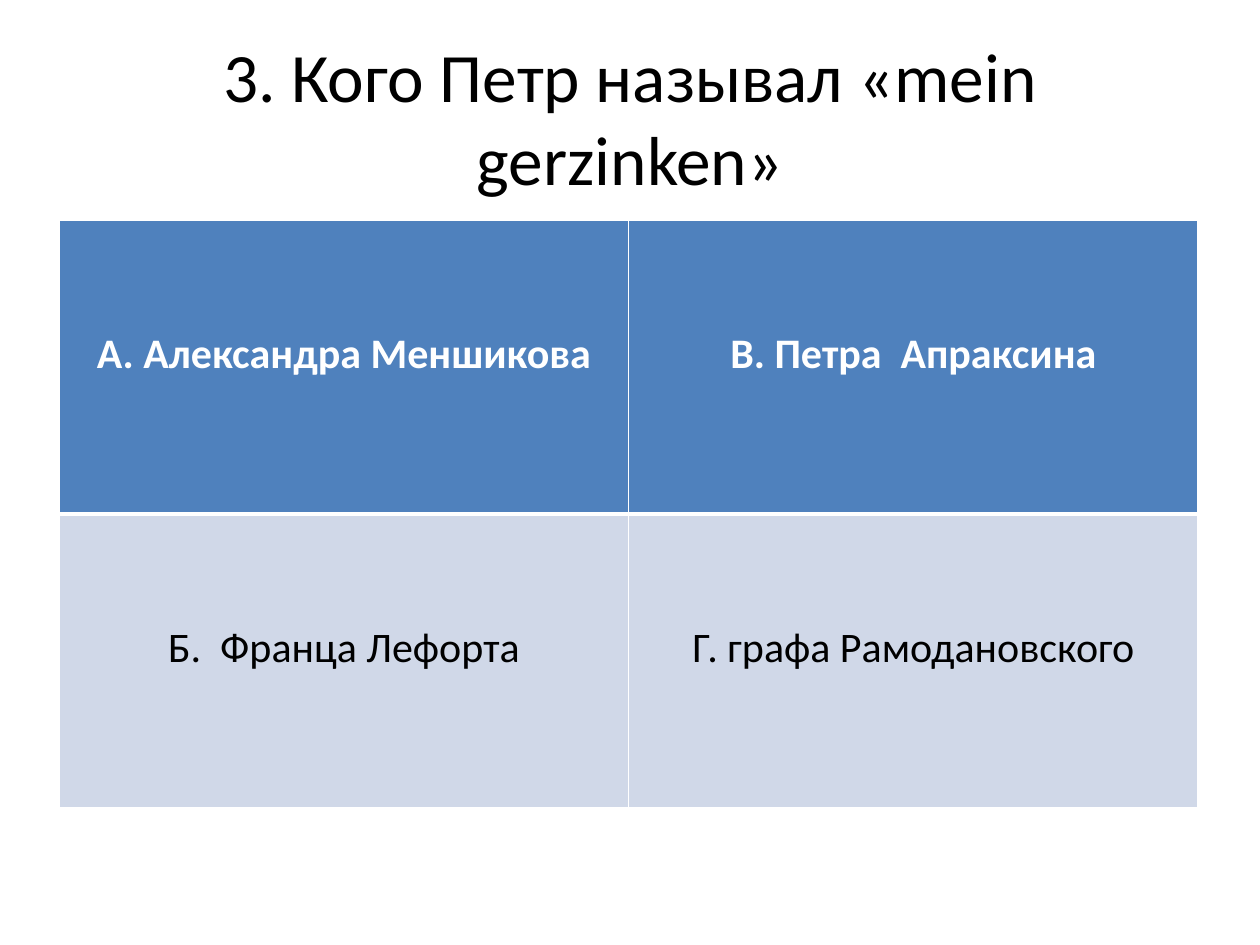
import pptx
import pptx.dml.color
import pptx.enum.text
import pptx.oxml
import pptx.oxml.ns
import pptx.util

COLOURS = {"ink": "000000", "paper": "FFFFFF", "header": "4F81BD", "body": "D0D8E8"}
FONT = "Calibri"
WIDTH, HEIGHT = 10, 7.5
COLUMN_WIDTH, ROW_HEIGHT = 4.52, 2.33
ANSWERS = [
    ["А. Александра Меншикова", "В. Петра  Апраксина"],
    ["Б.  Франца Лефорта", "Г. графа Рамодановского"],
]


def inches(*lengths):
    return [pptx.util.Inches(length) for length in lengths]


def rgb(name):
    return pptx.dml.color.RGBColor.from_string(COLOURS[name])


def write_text(frame, text, size=24, colour="ink", bold=False):
    para = frame.paragraphs[0]
    para.alignment = pptx.enum.text.PP_ALIGN.CENTER
    span = para.add_run()
    span.text = text
    span.font.name = FONT
    span.font.size = pptx.util.Pt(size)
    span.font.bold = bold
    span.font.color.rgb = rgb(colour)


def add_border(cell, side, points):
    namespace = pptx.oxml.ns.nsdecls("a")
    line = pptx.oxml.parse_xml(
        f'<a:ln{side} {namespace} w="{pptx.util.Pt(points)}"><a:solidFill>'
        f'<a:srgbClr val="{COLOURS["paper"]}"/></a:solidFill></a:ln{side}>'
    )
    cell._tc.get_or_add_tcPr().append(line)


def add_title(page, text):
    box = page.shapes.title
    box.left, box.top, box.width, box.height = inches(
        0.05 * WIDTH, 0.04 * HEIGHT, 0.9 * WIDTH, HEIGHT / 6
    )
    box.text_frame.word_wrap = True
    box.text_frame.vertical_anchor = pptx.enum.text.MSO_ANCHOR.MIDDLE
    write_text(box.text_frame, text, size=39.6)


def format_cell(cell, text, is_header, top_points, bottom_points):
    for side, points in zip("LRTB", (1, 1, top_points, bottom_points)):
        add_border(cell, side, points)
    cell.fill.solid()
    cell.fill.fore_color.rgb = rgb("header" if is_header else "body")
    cell.vertical_anchor = pptx.enum.text.MSO_ANCHOR.TOP
    cell.margin_top = pptx.util.Inches(0.86)
    write_text(
        cell.text_frame, text, colour="paper" if is_header else "ink", bold=is_header
    )


def add_answers(page, answers):
    rows, columns = len(answers), len(answers[0])
    place = inches(0.47, 1.75, columns * COLUMN_WIDTH, rows * ROW_HEIGHT)
    table = page.shapes.add_table(rows, columns, *place).table
    for row, texts in enumerate(answers):
        for column, text in enumerate(texts):
            format_cell(
                table.cell(row, column),
                text,
                is_header=row == 0,
                top_points=3 if row == 1 else 1,
                bottom_points=3 if row == 0 else 1,
            )


def main():
    deck = pptx.Presentation()
    deck.slide_width, deck.slide_height = inches(WIDTH, HEIGHT)
    page = deck.slides.add_slide(deck.slide_layouts.get_by_name("Title Only"))
    add_title(page, "3. Кого Петр называл «mein gerzinken»")
    add_answers(page, ANSWERS)
    deck.save("out.pptx")


if __name__ == "__main__":
    main()
